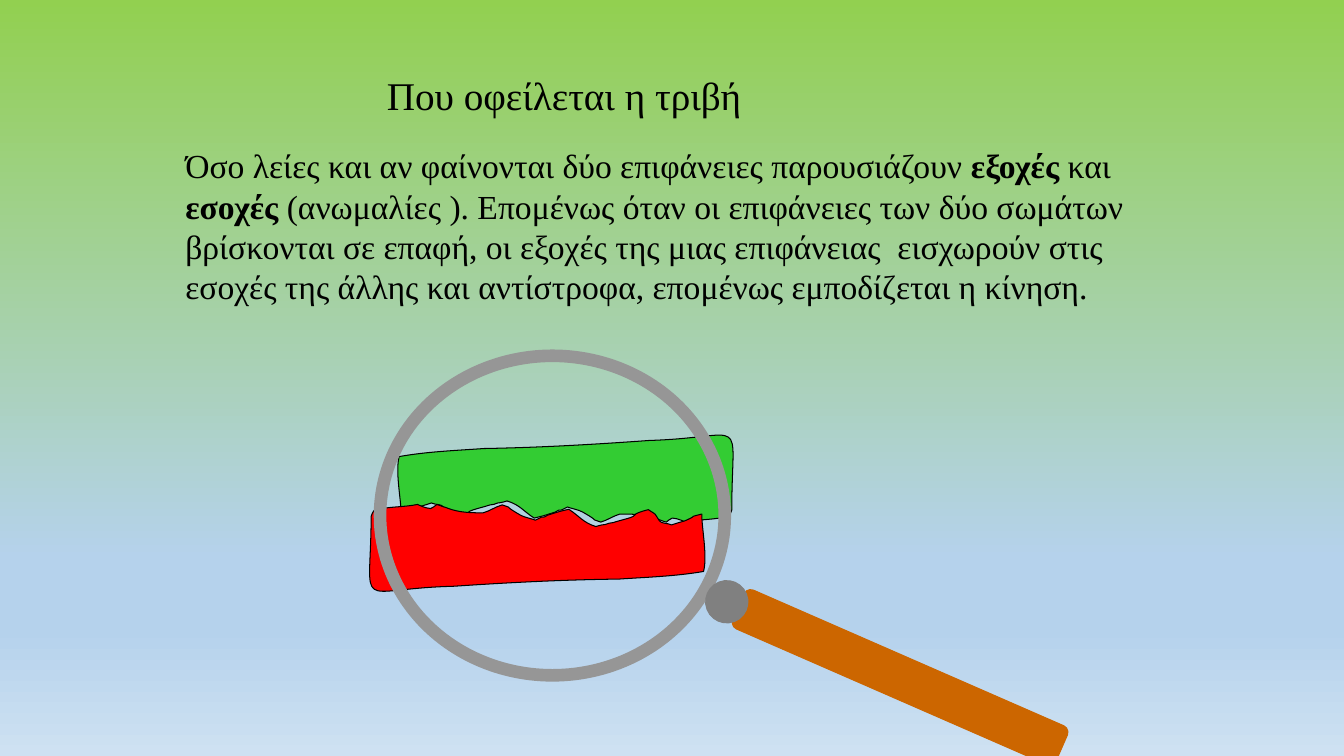
from dataclasses import dataclass

import pptx
import pptx.dml.color
import pptx.enum.shapes
import pptx.enum.text
import pptx.oxml.ns
import pptx.util
from lxml import etree

Pt = pptx.util.Pt
RGB = pptx.dml.color.RGBColor
Kind = pptx.enum.shapes.MSO_SHAPE
Anchor = pptx.enum.text.MSO_ANCHOR
qn = pptx.oxml.ns.qn

BLACK = RGB(0x00, 0x00, 0x00)
LEAF = RGB(0x92, 0xD0, 0x50)
SKY = RGB(0xB5, 0xD2, 0xEC)
PALE = RGB(0xCE, 0xE1, 0xF2)
GREEN = RGB(0x33, 0xCC, 0x33)
RED = RGB(0xFF, 0x00, 0x00)
SILVER = RGB(0x96, 0x96, 0x96)
GRAY = RGB(0x80, 0x80, 0x80)
WOOD = RGB(0xCC, 0x66, 0x00)

FONT = "Times New Roman"
STOPS = [(0, LEAF), (74, SKY), (83, SKY), (100, PALE)]

UNIT = 0.72
GRID_W, GRID_H = 352, 111
START = (6, 102)
CURVES = [
    (24, 97, 5, 103, 23, 95), (27, 94, 36, 91, 36, 91),
    (40, 93, 46, 92, 48, 95), (54, 104, 50, 100, 59, 106),
    (63, 105, 67, 104, 71, 102), (73, 100, 75, 98, 77, 98),
    (83, 96, 88, 95, 94, 93), (97, 93, 99, 92, 102, 91),
    (105, 91, 111, 89, 111, 89), (124, 93, 127, 99, 138, 106),
    (150, 103, 143, 105, 159, 100), (161, 98, 163, 98, 165, 98),
    (167, 97, 171, 95, 171, 95), (173, 96, 183, 98, 186, 100),
    (207, 112, 190, 105, 204, 110), (211, 108, 216, 104, 223, 102),
    (232, 102, 241, 102, 250, 104), (255, 105, 259, 107, 263, 108),
    (265, 109, 269, 110, 269, 110), (271, 109, 273, 106, 275, 106),
    (280, 106, 288, 110, 288, 110), (302, 107, 317, 108, 331, 104),
    (332, 102, 334, 100, 334, 98), (334, 0, 352, 26, 252, 29),
    (196, 33, 144, 36, 88, 37), (60, 39, 32, 40, 4, 45),
    (0, 60, 6, 88, 6, 102),
]


@dataclass
class Block:
    left: float
    top: float
    color: RGB
    turn: float = 0


@dataclass
class Part:
    kind: Kind
    left: float
    top: float
    width: float
    height: float
    line: RGB
    weight: float = 0.75
    fill: RGB | None = None
    turn: float = 0


@dataclass
class Label:
    left: float
    top: float
    width: float
    height: float
    size: float
    space: float
    anchor: Anchor
    inset: float
    runs: list[tuple[str, bool]]


BLOCKS = [
    Block(282.24, 293.76, GREEN),
    Block(252, 360, RED, 180.3),
]
LENS = [
    Part(Kind.OVAL, 271.44, 254.16, 246.24, 228.24, SILVER, 9),
    Part(Kind.ROUNDED_RECTANGLE, 516.96, 468.72, 252, 30.24, WOOD,
         fill=WOOD, turn=23.6),
    Part(Kind.OVAL, 504, 414.72, 30.24, 30.24, GRAY, fill=GRAY, turn=23.6),
]
LABELS = [
    Label(262.08, 40, 455.76, 59.76, 28, 0.9, Anchor.MIDDLE, 14.2,
          [("Που οφείλεται η τριβή", False)]),
    Label(125.28, 100.08, 711.36, 123.84, 24, 1.0, Anchor.TOP, 7.2, [
        ("Όσο λείες και αν φαίνονται δύο επιφάνειες παρουσιάζουν ", False),
        ("εξοχές", True),
        (" και ", False),
        ("εσοχές", True),
        (" (ανωμαλίες ). Επομένως όταν οι επιφάνειες των δύο σωμάτων "
         "βρίσκονται σε επαφή, οι εξοχές της μιας επιφάνειας  εισχωρούν στις "
         "εσοχές της άλλης και αντίστροφα, επομένως εμποδίζεται η κίνηση.",
         False),
    ]),
]


def paint(slide: pptx.slide.Slide) -> None:
    fill = slide.background.fill
    fill.gradient()
    fill.gradient_angle = 270
    stops = slide.element.find(".//" + qn("a:gsLst"))
    for stop in list(stops):
        stops.remove(stop)
    for place, color in STOPS:
        stop = etree.SubElement(stops, qn("a:gs"), pos=str(place * 1000))
        etree.SubElement(stop, qn("a:srgbClr"), val=str(color))


def write(slide: pptx.slide.Slide, label: Label) -> None:
    box = slide.shapes.add_textbox(
        Pt(label.left), Pt(label.top), Pt(label.width), Pt(label.height))
    frame = box.text_frame
    frame.word_wrap = True
    frame.vertical_anchor = label.anchor
    frame.margin_left = Pt(label.inset)
    para = frame.paragraphs[0]
    para.line_spacing = label.space
    for text, bold in label.runs:
        run = para.add_run()
        run.text = text
        run.font.name = FONT
        run.font.size = Pt(label.size)
        run.font.bold = bold
        run.font.color.rgb = BLACK


def bend(shape: pptx.shapes.autoshape.Shape) -> None:
    track = shape.element.find(".//" + qn("a:path"))
    track.set("w", str(GRID_W))
    track.set("h", str(GRID_H))
    start = track.find(qn("a:moveTo")).find(qn("a:pt"))
    start.set("x", str(START[0]))
    start.set("y", str(START[1]))
    for line in track.findall(qn("a:lnTo")):
        track.remove(line)
    close = track.find(qn("a:close"))
    for curve in CURVES:
        arc = etree.SubElement(track, qn("a:cubicBezTo"))
        for x, y in zip(curve[::2], curve[1::2]):
            etree.SubElement(arc, qn("a:pt"), x=str(x), y=str(y))
    track.append(close)


def carve(slide: pptx.slide.Slide, block: Block) -> None:
    pen = slide.shapes.build_freeform(*START, scale=Pt(UNIT))
    pen.add_line_segments([curve[4:] for curve in CURVES], close=True)
    shape = pen.convert_to_shape()
    bend(shape)
    shape.left, shape.top = Pt(block.left), Pt(block.top)
    shape.width, shape.height = Pt(UNIT * GRID_W), Pt(UNIT * GRID_H)
    shape.rotation = block.turn
    shape.shadow.inherit = False
    shape.fill.solid()
    shape.fill.fore_color.rgb = block.color
    shape.line.color.rgb = BLACK
    shape.line.width = Pt(0.75)


def place(group: pptx.shapes.group.GroupShape, part: Part) -> None:
    shape = group.shapes.add_shape(
        part.kind, Pt(part.left), Pt(part.top), Pt(part.width), Pt(part.height))
    shape.shadow.inherit = False
    shape.rotation = part.turn
    shape.line.color.rgb = part.line
    shape.line.width = Pt(part.weight)
    if part.fill is None:
        shape.fill.background()
    else:
        shape.fill.solid()
        shape.fill.fore_color.rgb = part.fill


def main() -> None:
    deck = pptx.Presentation()
    deck.slide_width, deck.slide_height = Pt(960), Pt(540)
    slide = deck.slides.add_slide(deck.slide_layouts[6])
    paint(slide)
    for label in LABELS:
        write(slide, label)
    for block in BLOCKS:
        carve(slide, block)
    group = slide.shapes.add_group_shape()
    for part in LENS:
        place(group, part)
    deck.save("out.pptx")


if __name__ == "__main__":
    main()
